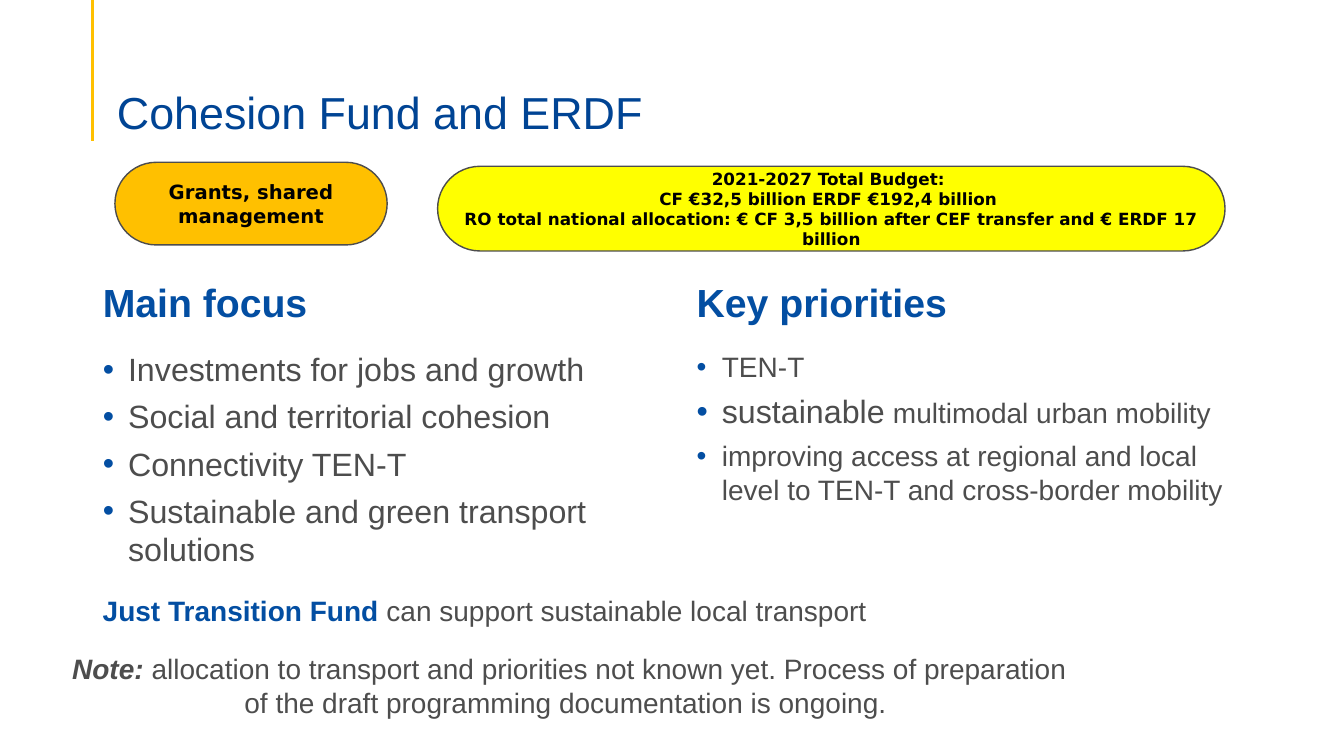
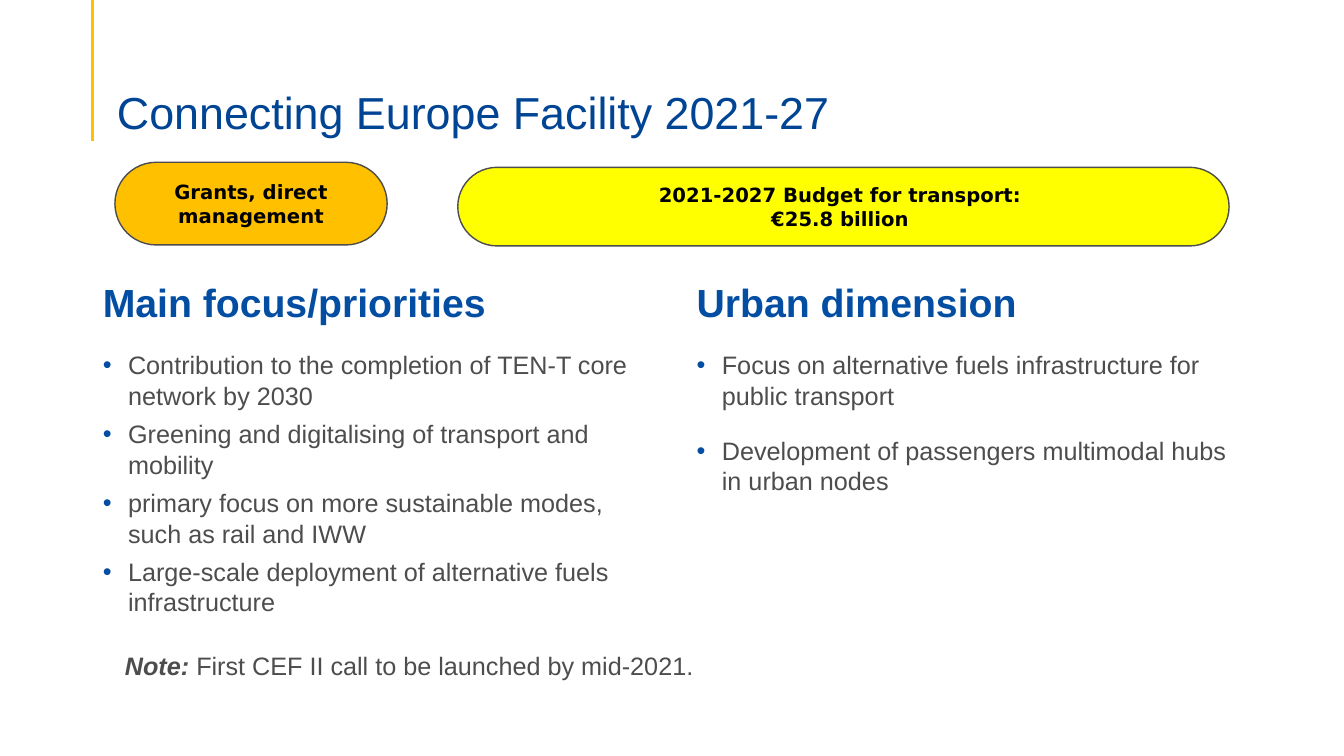
import pptx
import pptx.dml.color
import pptx.enum.shapes
import pptx.enum.text
import pptx.oxml.ns
import pptx.util
from lxml import etree

EMU_PER_PX = 9144
TITLE_BLUE = "004494"
BLUE = "034EA2"
GREY = "4D4D4D"
BLACK = "000000"
WHITE = "FFFFFF"
AMBER = "FFC000"
YELLOW = "FFFF00"
TEXT_FONT = "Arial"
PILL_FONT = "DejaVu Sans"
COMPARISON_LAYOUT = 4
LEFT_X, RIGHT_X = 92, 681
HEADING_Y, LIST_Y = 238, 342
LEFT = pptx.enum.text.PP_ALIGN.LEFT
CENTER = pptx.enum.text.PP_ALIGN.CENTER
TOP = pptx.enum.text.MSO_ANCHOR.TOP
MIDDLE = pptx.enum.text.MSO_ANCHOR.MIDDLE
BOTTOM = pptx.enum.text.MSO_ANCHOR.BOTTOM
RECTANGLE = pptx.enum.shapes.MSO_SHAPE.RECTANGLE
ROUNDED = pptx.enum.shapes.MSO_SHAPE.ROUNDED_RECTANGLE


def px(n):
    return pptx.util.Emu(n * EMU_PER_PX)


def rgb(color):
    return pptx.dml.color.RGBColor.from_string(color)


def place(sp, x, y, w, h):
    sp.left, sp.top, sp.width, sp.height = px(x), px(y), px(w), px(h)


def add_run(p, text, size, color, font=TEXT_FONT, bold=False, italic=False):
    r = p.add_run()
    r.text = text
    r.font.size = pptx.util.Pt(size)
    r.font.name = font
    r.font.bold = bold
    r.font.italic = italic
    r.font.color.rgb = rgb(color)


def set_frame(tf, anchor):
    tf.word_wrap = True
    tf.auto_size = pptx.enum.text.MSO_AUTO_SIZE.NONE
    tf.vertical_anchor = anchor


def next_paragraph(tf, index, align=LEFT, after=0):
    p = tf.add_paragraph() if index else tf.paragraphs[0]
    p.alignment = align
    p.space_before = pptx.util.Pt(0)
    p.space_after = pptx.util.Pt(after)
    return p


def add_bullet(p):
    pPr = p._p.get_or_add_pPr()
    pPr.set("marL", str(px(25)))
    pPr.set("indent", str(-px(25)))
    qn = pptx.oxml.ns.qn
    clr = etree.SubElement(pPr, qn("a:buClr"))
    etree.SubElement(clr, qn("a:srgbClr")).set("val", BLUE)
    etree.SubElement(pPr, qn("a:buChar")).set("char", "•")


def add_accent_line(slide):
    line = slide.shapes.add_connector(
        pptx.enum.shapes.MSO_CONNECTOR.STRAIGHT, px(92), px(0), px(92), px(140))
    line.line.color.rgb = rgb(AMBER)
    line.line.width = pptx.util.Pt(2.25)
    spPr = line._element.spPr
    etree.SubElement(spPr, pptx.oxml.ns.qn("a:effectLst"))


def add_box(slide, shape, x, y, w, h, fill, outline):
    sp = slide.shapes.add_shape(shape, px(x), px(y), px(w), px(h))
    sp.shadow.inherit = False
    sp.fill.solid()
    sp.fill.fore_color.rgb = rgb(fill)
    sp.line.color.rgb = rgb(outline)
    sp.line.width = pptx.util.Pt(1)
    set_frame(sp.text_frame, MIDDLE)
    return sp


def fill_title(slide, text):
    sp = slide.shapes.title
    place(sp, 106, 52, 1150, 86)
    tf = sp.text_frame
    set_frame(tf, BOTTOM)
    tf.margin_bottom = 0
    p = next_paragraph(tf, 0)
    p.line_spacing = 0.9
    add_run(p, text, 32, TITLE_BLUE)


def fill_heading(sp, x, w, text):
    place(sp, x, HEADING_Y, w, 90)
    set_frame(sp.text_frame, BOTTOM)
    p = next_paragraph(sp.text_frame, 0, after=18)
    add_run(p, text, 28, BLUE, bold=True)


def fill_list(sp, x, w, h, items, after=6):
    place(sp, x, LIST_Y, w, h)
    set_frame(sp.text_frame, TOP)
    for i, runs in enumerate(items):
        p = next_paragraph(sp.text_frame, i, after=after)
        add_bullet(p)
        for text, size in runs:
            add_run(p, text, size, GREY)


def add_pill(slide, x, y, w, h, fill, size, lines):
    sp = add_box(slide, ROUNDED, x, y, w, h, fill, GREY)
    sp.adjustments[0] = 0.5
    for i, text in enumerate(lines):
        p = next_paragraph(sp.text_frame, i, CENTER)
        add_run(p, text, size, BLACK, PILL_FONT, bold=True)


def add_remark(slide, x, y, w, h, size, lead, text, lead_color=GREY,
               italic=True, align=LEFT, bottom=5):
    sp = add_box(slide, RECTANGLE, x, y, w, h, WHITE, WHITE)
    sp.text_frame.margin_bottom = px(bottom)
    p = next_paragraph(sp.text_frame, 0, align)
    add_run(p, lead, size, lead_color, bold=True, italic=italic)
    add_run(p, text, size, GREY)


def add_fund_slide(prs, title, management, left_heading, right_heading):
    slide = prs.slides.add_slide(prs.slide_layouts[COMPARISON_LAYOUT])
    add_accent_line(slide)
    fill_title(slide, title)
    ph = slide.placeholders
    fill_heading(ph[1], LEFT_X, 564, left_heading)
    fill_heading(ph[3], RIGHT_X, 567, right_heading)
    add_pill(slide, 114, 161, 270, 82, AMBER, 14, [management])
    return slide, ph[2], ph[4]


def add_cohesion_slide(prs):
    slide, focus, priorities = add_fund_slide(
        prs, "Cohesion Fund and ERDF", "Grants, shared management",
        "Main focus", "Key priorities")
    add_pill(slide, 434, 165, 781, 84, YELLOW, 12, [
        "2021-2027 Total Budget: ",
        "CF €32,5 billion ERDF €192,4 billion ",
        "RO total national allocation: € CF 3,5 billion after CEF transfer "
        "and € ERDF 17 billion"])
    fill_list(focus, LEFT_X, 580, 267, [
        [("Investments for jobs and growth", 23)],
        [("Social and territorial cohesion", 23)],
        [("Connectivity TEN-T", 23)],
        [("Sustainable and green transport solutions", 23)]])
    fill_list(priorities, RIGHT_X, 567, 304, [
        [("TEN-T", 20)],
        [("sustainable", 23), (" multimodal urban mobility", 20)],
        [("improving access at regional and local level to TEN-T and "
          "cross-border mobility", 20)]])
    add_remark(slide, 92, 583, 935, 44, 20, "Just Transition Fund ",
               "can support sustainable local transport", BLUE, italic=False)
    add_remark(slide, 48, 647, 1034, 66, 20, "Note:",
               " allocation to transport and priorities not known yet. Process of "
               "preparation of the draft programming documentation is ongoing. ",
               align=CENTER)


def add_connecting_slide(prs):
    slide, focus, urban = add_fund_slide(
        prs, "Connecting Europe Facility 2021-27", "Grants, direct management",
        "Main focus/priorities", "Urban dimension")
    add_pill(slide, 454, 166, 765, 78, YELLOW, 14, [
        "2021-2027 Budget for transport: ", "€25.8 billion "])
    fill_list(focus, LEFT_X, 564, 280, [
        [("Contribution to the completion of TEN-T core network by 2030", 18)],
        [("Greening and digitalising of transport and mobility", 18)],
        [("primary focus on more sustainable modes, such as rail and IWW", 18)],
        [("Large-scale deployment of alternative fuels infrastructure", 18)]])
    fill_list(urban, RIGHT_X, 567, 332, [
        [("Focus on alternative fuels infrastructure for public transport", 18)],
        [("Development of passengers multimodal hubs in urban nodes", 18)]],
        after=18)
    add_remark(slide, 114, 638, 908, 73, 18, "Note: ",
               "First CEF II call to be launched by mid-2021.", bottom=34)


def main():
    prs = pptx.Presentation()
    prs.slide_width, prs.slide_height = px(1333), px(750)
    add_cohesion_slide(prs)
    add_connecting_slide(prs)
    prs.save("out.pptx")


if __name__ == "__main__":
    main()
